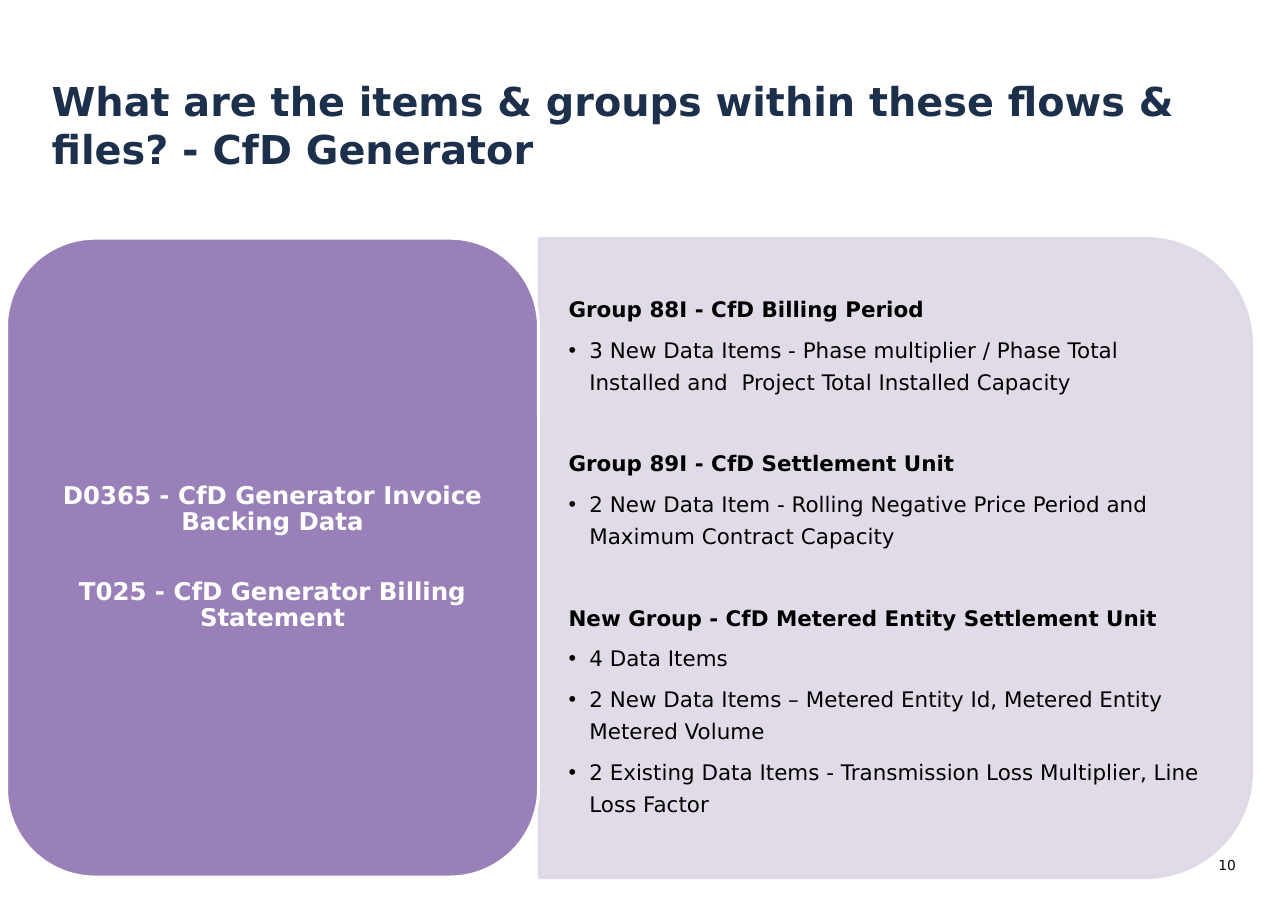
from dataclasses import dataclass

import pptx
import pptx.dml.color
import pptx.enum.shapes
import pptx.enum.text
import pptx.oxml.ns
import pptx.util
from lxml import etree

Cm = pptx.util.Cm
Pt = pptx.util.Pt
RGBColor = pptx.dml.color.RGBColor
PP_ALIGN = pptx.enum.text.PP_ALIGN
MSO_ANCHOR = pptx.enum.text.MSO_ANCHOR
MSO_SHAPE = pptx.enum.shapes.MSO_SHAPE
qn = pptx.oxml.ns.qn

FONT_NAME = "DejaVu Sans"
NAVY = RGBColor(0x1C, 0x2F, 0x4B)
PURPLE = RGBColor(0x99, 0x80, 0xB9)
LILAC = RGBColor(0xDE, 0xD8, 0xE6)
WHITE = RGBColor(0xFF, 0xFF, 0xFF)
BLACK = RGBColor(0x00, 0x00, 0x00)

BULLET_INDENT = Cm(0.48)
LIST_LINE = Pt(21)
LIST_GAP = Pt(5.6)


@dataclass(frozen=True)
class Box:
    left: float
    top: float
    width: float
    height: float

    def lengths(self) -> list[pptx.util.Length]:
        return [Cm(value) for value in (self.left, self.top, self.width, self.height)]


@dataclass(frozen=True)
class DataGroup:
    heading: str
    items: tuple[str, ...]


TITLE_BOX = Box(1.19, 1.75, 27.31, 1.19)
NUMBER_BOX = Box(27.51, 19.74, 0.99, 0.51)
PANEL_BOX = Box(13.28, 4.65, 14.73, 16.43)
FLOWS_BOX = Box(0.15, 5.49, 12.27, 14.73)
GROUPS_BOX = Box(13.11, 6.68, 14.88, 12.4)

TITLE = "What are the items & groups within these flows & files? - CfD Generator"
FLOWS = (
    "D0365 - CfD Generator Invoice Backing Data",
    "T025 - CfD Generator Billing Statement",
)
GROUPS = (
    DataGroup("Group 88I - CfD Billing Period", (
        "3 New Data Items - Phase multiplier / Phase Total Installed and  Project Total Installed Capacity",
    )),
    DataGroup("Group 89I - CfD Settlement Unit", (
        "2 New Data Item - Rolling Negative Price Period and Maximum Contract Capacity",
    )),
    DataGroup("New Group - CfD Metered Entity Settlement Unit", (
        "4 Data Items",
        "2 New Data Items – Metered Entity Id, Metered Entity Metered Volume",
        "2 Existing Data Items - Transmission Loss Multiplier, Line Loss Factor",
    )),
)


def place(shape, box: Box) -> None:
    shape.left, shape.top, shape.width, shape.height = box.lengths()


def prepare_frame(shape, anchor, side: float = 0, edge: float = 0):
    """Set wrapping, anchor and margins in cm, and return the text frame."""
    frame = shape.text_frame
    frame.word_wrap = True
    frame.auto_size = pptx.enum.text.MSO_AUTO_SIZE.NONE
    frame.vertical_anchor = anchor
    frame.margin_left = frame.margin_right = Cm(side)
    frame.margin_top = frame.margin_bottom = Cm(edge)
    return frame


def next_paragraph(frame):
    """Return the empty first paragraph, or a new one after the text."""
    first = frame.paragraphs[0]
    return frame.add_paragraph() if first.text else first


def write(paragraph, text: str, size: float, color: RGBColor,
          bold: bool = False, align=PP_ALIGN.LEFT) -> None:
    paragraph.text = text
    paragraph.alignment = align
    font = paragraph.font
    font.name, font.size, font.bold = FONT_NAME, Pt(size), bold
    font.color.rgb = color


def set_bullet(paragraph, bulleted: bool) -> None:
    properties = paragraph._p.get_or_add_pPr()
    indent = BULLET_INDENT if bulleted else 0
    properties.set("marL", str(indent))
    properties.set("indent", str(-indent))
    if bulleted:
        etree.SubElement(properties, qn("a:buChar"), char="•")
    else:
        etree.SubElement(properties, qn("a:buNone"))


def add_panel(slide, preset, box: Box, fill: RGBColor, line: RGBColor):
    shape = slide.shapes.add_shape(preset, *box.lengths())
    shape.shadow.inherit = False
    shape.fill.solid()
    shape.fill.fore_color.rgb = fill
    shape.line.color.rgb = line
    shape.line.width = Pt(2)
    return shape


def set_opacity(shape, percent: int) -> None:
    for color in shape.element.spPr.iter(qn("a:srgbClr")):
        etree.SubElement(color, qn("a:alpha"), val=str(percent * 1000))


def fill_title(slide) -> None:
    title = slide.shapes.title
    place(title, TITLE_BOX)
    paragraph = prepare_frame(title, MSO_ANCHOR.TOP).paragraphs[0]
    paragraph.line_spacing = Pt(31.4)
    write(paragraph, TITLE, 26, NAVY, bold=True)


def add_number(slide) -> None:
    number = slide.shapes.add_textbox(*NUMBER_BOX.lengths())
    frame = prepare_frame(number, MSO_ANCHOR.TOP)
    write(frame.paragraphs[0], "10", 9, BLACK, align=PP_ALIGN.RIGHT)


def add_flows(slide) -> None:
    flows = add_panel(slide, MSO_SHAPE.ROUNDED_RECTANGLE, FLOWS_BOX, PURPLE, WHITE)
    frame = prepare_frame(flows, MSO_ANCHOR.MIDDLE, side=0.18, edge=0.08)
    for index, flow in enumerate(FLOWS):
        paragraph = next_paragraph(frame)
        paragraph.line_spacing = 0.9
        paragraph.space_before = Pt(28 if index else 0)
        write(paragraph, flow, 16, WHITE, bold=True, align=PP_ALIGN.CENTER)


def add_list_line(frame, text: str, space_before: pptx.util.Length, is_heading: bool) -> None:
    paragraph = next_paragraph(frame)
    set_bullet(paragraph, bulleted=not is_heading)
    paragraph.line_spacing = LIST_LINE
    paragraph.space_before = space_before
    paragraph.space_after = LIST_GAP
    write(paragraph, text, 14, BLACK, bold=is_heading)


def fill_groups(slide) -> None:
    body = slide.placeholders[1]
    place(body, GROUPS_BOX)
    slide.shapes.element.append(body.element)  # in front of the panel
    frame = prepare_frame(body, MSO_ANCHOR.TOP)
    for index, group in enumerate(GROUPS):
        gap = Pt(LIST_LINE.pt + LIST_GAP.pt) if index else Pt(0)
        add_list_line(frame, group.heading, gap, is_heading=True)
        for item in group.items:
            add_list_line(frame, item, Pt(0), is_heading=False)


def main() -> None:
    presentation = pptx.Presentation()
    presentation.slide_width, presentation.slide_height = Cm(29.7), Cm(21)
    slide = presentation.slides.add_slide(presentation.slide_layouts[1])
    fill_title(slide)
    add_number(slide)
    panel = add_panel(slide, MSO_SHAPE.ROUND_2_SAME_RECTANGLE, PANEL_BOX, LILAC, LILAC)
    panel.rotation = 90
    set_opacity(panel, 90)
    add_flows(slide)
    fill_groups(slide)
    presentation.save("out.pptx")


if __name__ == "__main__":
    main()
